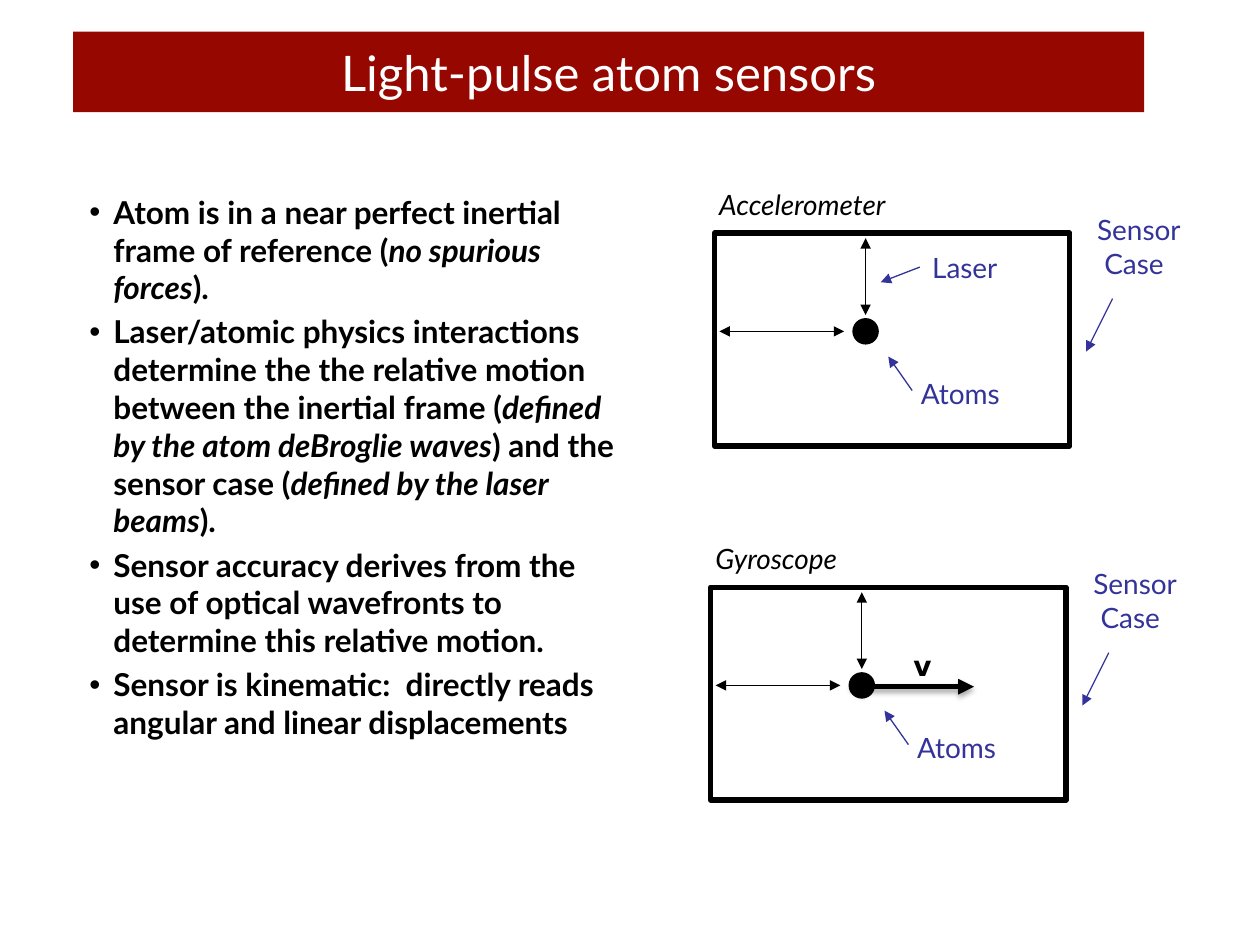
from lxml import etree
from pptx import Presentation
from pptx import util as u
from pptx.dml.color import RGBColor
from pptx.enum import shapes, text
from pptx.oxml.ns import qn

COLUMNS, ROWS = 100, 75
UNIT = u.Inches(0.1)
BLACK, WHITE, RED, BLUE = "000000", "FFFFFF", "960700", "333399"
LABEL = {"name": "Lato", "size": u.Pt(16)}
BODY = {"name": "Lato", "size": u.Pt(18), "bold": True}

# Every second piece of a bullet, split at "|", is italic.
BULLETS = [
    "Atom is in a near perfect inertial frame of reference (|no spurious forces|).",
    "Laser/atomic physics interactions determine the the relative motion between "
    "the inertial frame (|defined by the atom deBroglie waves|) and the sensor case "
    "(|defined by the laser beams|).",
    "Sensor accuracy derives from the use of optical wavefronts to determine this "
    "relative motion.",
    "Sensor is kinematic:  directly reads angular and linear displacements",
]


def color(value):
    return RGBColor.from_string(value)


def grid(*counts):
    """Turn counts of columns and rows into lengths."""
    return [round(count * UNIT) for count in counts]


def set_format(font, value, formats):
    for name, setting in formats.items():
        setattr(font, name, setting)
    font.color.rgb = color(value)


def move(shape, *box):
    shape.left, shape.top, shape.width, shape.height = grid(*box)


def add_outline(parent, kind, box, fill, width):
    shape = parent.add_shape(kind, *grid(*box))
    shape.shadow.inherit = False
    shape.fill.solid()
    shape.fill.fore_color.rgb = color(fill)
    shape.line.color.rgb = color(BLACK)
    shape.line.width = u.Pt(width)


def add_label(parent, words, box, value=BLUE, **formats):
    frame = parent.add_textbox(*grid(*box)).text_frame
    frame.word_wrap = True
    frame.auto_size = text.MSO_AUTO_SIZE.SHAPE_TO_FIT_TEXT
    paragraph = frame.paragraphs[0]
    paragraph.text = words
    for run in paragraph.runs:
        set_format(run.font, value, {**LABEL, **formats})


def add_arrow(parent, ends, value=BLUE, width=0.75, heads=("headEnd",)):
    """Draw a line with a triangle at its start (headEnd), its end (tailEnd) or both."""
    line = parent.add_connector(shapes.MSO_CONNECTOR.STRAIGHT, *grid(*ends))
    line.line.color.rgb = color(value)
    line.line.width = u.Pt(width)
    outline = line.line._get_or_add_ln()
    for head in heads:
        etree.SubElement(outline, qn("a:" + head), type="triangle")
    return etree.SubElement(line._element.spPr, qn("a:effectLst"))


def add_shadow(effects):
    shadow = etree.SubElement(effects, qn("a:outerShdw"), blurRad=str(u.Pt(3.1)),
                              dist=str(u.Pt(1.8)), dir="5400000", rotWithShape="0")
    tint = etree.SubElement(shadow, qn("a:srgbClr"), val=BLACK)
    etree.SubElement(tint, qn("a:alpha"), val="35000")


def add_sensor(slide, name, left, top):
    """Group a sensor case, its atoms, laser beams and labels."""
    group = slide.shapes.add_group_shape().shapes

    def at(x, y, *size):
        return (left + x, top + y, *size)

    def between(x1, y1, x2, y2):
        return at(x1, y1) + at(x2, y2)

    both = ("headEnd", "tailEnd")
    add_outline(group, shapes.MSO_SHAPE.RECTANGLE, at(0, 0, 28.2, 16.9), WHITE, 3)
    add_arrow(group, between(29.5, 9.4, 31.6, 5.2))
    add_label(group, "Sensor\v Case", at(29.4, -2.1, 9.3, 6.4))
    add_outline(group, shapes.MSO_SHAPE.OVAL, at(11, 6.8, 2, 2), BLACK, 0.75)
    add_arrow(group, between(13.8, 9.8, 15.7, 12.5))
    add_label(group, "Atoms", at(15.4, 10.9, 14.2, 3.7))
    add_label(group, name, at(-0.6, -4.1, 28.9, 3.7), BLACK, italic=True)
    add_arrow(group, between(0.4, 7.8, 10.3, 7.8), BLACK, heads=both)
    add_arrow(group, between(12, 0.4, 12, 6.5), BLACK, heads=both)


def fill_title(title):
    move(title, 5.8, 2.5, 85, 6.4)
    title.fill.solid()
    title.fill.fore_color.rgb = color(RED)
    frame = title.text_frame
    frame.text = "Light-pulse atom sensors"
    frame.auto_size = text.MSO_AUTO_SIZE.NONE
    frame.vertical_anchor = text.MSO_ANCHOR.MIDDLE
    paragraph = frame.paragraphs[0]
    paragraph.alignment = text.PP_ALIGN.CENTER
    set_format(paragraph.runs[0].font, WHITE, {"name": "Lato", "size": u.Pt(28)})


def fill_body(body):
    move(body, 6.1, 14.8, 43.9, 33.8)
    frame = body.text_frame
    frame.auto_size = text.MSO_AUTO_SIZE.NONE
    for number, bullet in enumerate(BULLETS):
        paragraph = frame.add_paragraph() if number else frame.paragraphs[0]
        paragraph.space_before = u.Pt(3.6 if number else 0)
        properties = paragraph._p.get_or_add_pPr()
        properties.set("marL", str(u.Inches(0.19)))
        properties.set("indent", str(-u.Inches(0.19)))
        etree.SubElement(properties, qn("a:buChar"), char="•")
        for index, piece in enumerate(bullet.split("|")):
            run = paragraph.add_run()
            run.text = piece
            set_format(run.font, BLACK, {**BODY, "italic": index % 2 == 1})


def main():
    presentation = Presentation()
    presentation.slide_width, presentation.slide_height = grid(COLUMNS, ROWS)
    slide = presentation.slides.add_slide(presentation.slide_layouts[1])
    fill_title(slide.shapes.title)
    fill_body(slide.placeholders[1])

    add_sensor(slide, "Accelerometer", 56.7, 18.5)
    add_sensor(slide, "Gyroscope", 56.4, 46.6)

    add_shadow(add_arrow(slide.shapes, (67.4, 54.5, 77.3, 54.5), BLACK, 3,
                         ("headEnd", "tailEnd")))
    add_label(slide.shapes, "v", (71.5, 51, 4.8, 4), BLACK,
              name="DejaVu Sans", bold=True)
    add_arrow(slide.shapes, (69.9, 22.4, 73, 21.2))
    add_label(slide.shapes, "Laser", (73, 19.4, 14.2, 3.7))
    presentation.save("out.pptx")


if __name__ == "__main__":
    main()
